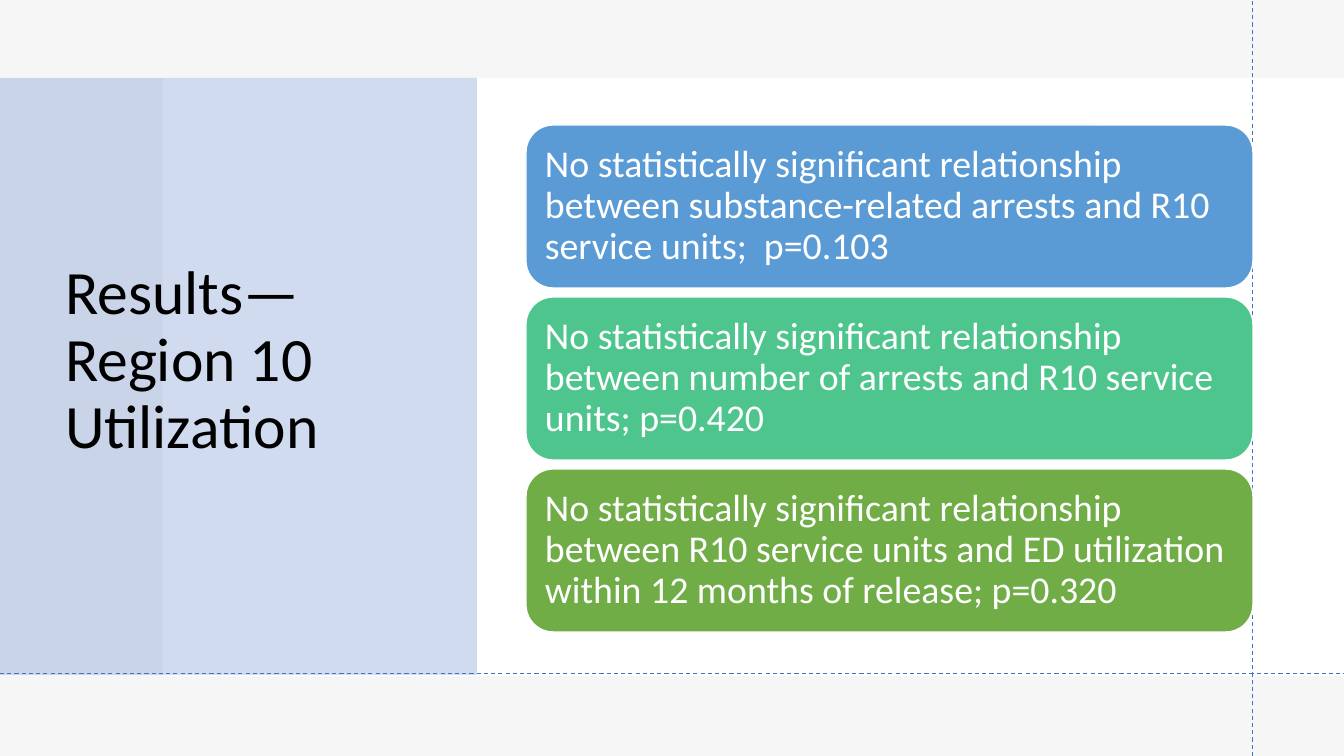
from dataclasses import dataclass

from lxml.etree import SubElement
from pptx import Presentation
from pptx.dml.color import RGBColor
from pptx.enum.dml import MSO_LINE
from pptx.enum.shapes import MSO_CONNECTOR, MSO_SHAPE
from pptx.enum.text import MSO_ANCHOR, PP_ALIGN
from pptx.oxml.ns import qn
from pptx.util import Pt

WIDTH, HEIGHT = 1344, 756
EMU_PER_PX = 12192000 / WIDTH


@dataclass(frozen=True)
class Theme:
    font: str = "Calibri"
    title_size: int = 44
    card_size: int = 27
    black: str = "000000"
    white: str = "FFFFFF"
    grey: str = "E7E6E6"
    accent: str = "4472C4"
    grey_opacity: int = 35
    panel_opacity: int = 25


THEME = Theme()

TITLE = "Results—Region 10 Utilization"
FINDINGS = [
    ("No statistically significant relationship between substance-related "
     "arrests and R10 service units;  p=0.103", "5B9BD5"),
    ("No statistically significant relationship between number of arrests "
     "and R10 service units; p=0.420", "4DC58D"),
    ("No statistically significant relationship between R10 service units "
     "and ED utilization within 12 months of release; p=0.320", "70AD47"),
]
CARD_LEFT, CARD_TOP, CARD_WIDTH, CARD_HEIGHT = 526, 125, 727, 163
CARD_PITCH = 172


def px(length):
    return round(length * EMU_PER_PX)


def paint(fill, color):
    fill.solid()
    fill.fore_color.rgb = RGBColor.from_string(color)


def set_opacity(element, percent):
    """Make the first colour found inside the element translucent."""
    color = next(element.iter(qn("a:srgbClr")))
    SubElement(color, qn("a:alpha")).set("val", str(percent * 1000))


def add_block(slide, left, top, width, height, color,
              kind=MSO_SHAPE.RECTANGLE, opacity=100):
    block = slide.shapes.add_shape(kind, px(left), px(top), px(width), px(height))
    block.shadow.inherit = False
    block.line.fill.background()
    paint(block.fill, color)
    if opacity < 100:
        set_opacity(block.element, opacity)
    return block


def write_text(shape, text, *, size, color, inset_x, inset_y):
    frame = shape.text_frame
    frame.word_wrap = True
    frame.vertical_anchor = MSO_ANCHOR.MIDDLE
    frame.margin_left = frame.margin_right = px(inset_x)
    frame.margin_top = frame.margin_bottom = px(inset_y)
    para = frame.paragraphs[0]
    para.alignment = PP_ALIGN.LEFT
    para.line_spacing = 0.9
    span = para.add_run()
    span.text = text
    span.font.name = THEME.font
    span.font.size = Pt(size)
    span.font.color.rgb = RGBColor.from_string(color)


def add_guide(slide, x1, y1, x2, y2):
    guide = slide.shapes.add_connector(
        MSO_CONNECTOR.STRAIGHT, px(x1), px(y1), px(x2), px(y2))
    guide.line.color.rgb = RGBColor.from_string(THEME.accent)
    guide.line.width = Pt(0.75)
    guide.line.dash_style = MSO_LINE.DASH
    SubElement(guide.element.spPr, qn("a:effectLst"))


def add_backdrop(slide):
    paint(slide.background.fill, THEME.grey)
    set_opacity(slide.element, THEME.grey_opacity)
    add_block(slide, 0, 0, WIDTH, HEIGHT, THEME.white)
    add_block(slide, 0, 0, WIDTH, HEIGHT, THEME.grey, opacity=THEME.grey_opacity)
    add_block(slide, 163, 78, WIDTH - 163, 598, THEME.white)
    add_block(slide, 0, 78, 477, 597, THEME.accent, opacity=THEME.panel_opacity)


def add_title(slide):
    box = slide.shapes.add_textbox(px(55), px(75), px(398), px(573))
    write_text(box, TITLE, size=THEME.title_size, color=THEME.black,
               inset_x=10, inset_y=5)


def add_card(slide, top, text, color):
    card = add_block(slide, CARD_LEFT, top, CARD_WIDTH, CARD_HEIGHT, color,
                     kind=MSO_SHAPE.ROUNDED_RECTANGLE)
    paint(card.line.fill, THEME.white)
    card.line.width = Pt(1)
    write_text(card, text, size=THEME.card_size, color=THEME.white,
               inset_x=11, inset_y=11)


def main():
    deck = Presentation()
    deck.slide_width, deck.slide_height = px(WIDTH), px(HEIGHT)
    slide = deck.slides.add_slide(deck.slide_layouts[6])
    add_backdrop(slide)
    add_title(slide)
    add_guide(slide, 1253, HEIGHT, 1253, 0)
    add_guide(slide, 0, 674, WIDTH, 674)
    for row, (text, color) in enumerate(FINDINGS):
        add_card(slide, CARD_TOP + row * CARD_PITCH, text, color)
    deck.save("out.pptx")


if __name__ == "__main__":
    main()
